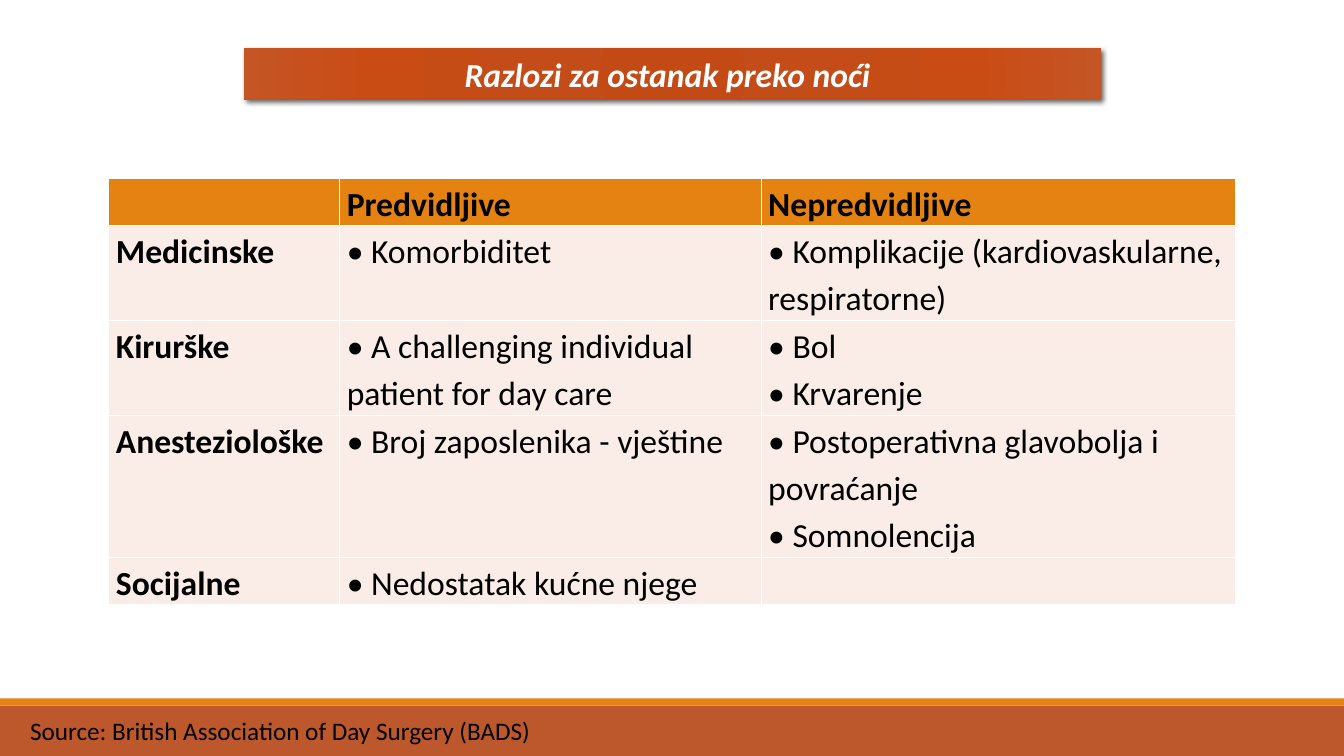
from lxml.etree import SubElement
from pptx import Presentation
from pptx.dml.color import RGBColor
from pptx.enum.shapes import MSO_SHAPE
from pptx.enum.text import MSO_ANCHOR, MSO_AUTO_SIZE, PP_ALIGN
from pptx.oxml import parse_xml
from pptx.oxml.ns import nsdecls, qn
from pptx.util import Inches, Pt

WHITE = RGBColor(0xFF, 0xFF, 0xFF)
BLACK = RGBColor(0, 0, 0)
ORANGE = RGBColor(0xE4, 0x83, 0x12)
RUST = RGBColor(0xBD, 0x58, 0x2C)
PALE = RGBColor(0xFA, 0xED, 0xE7)
TITLE_STOPS = [(0, RGBColor(0xC4, 0x4A, 0x15)), (34, RGBColor(0xC3, 0x4C, 0x18)),
               (70, RGBColor(0xC9, 0x4C, 0x15)), (100, RGBColor(0xC4, 0x55, 0x25))]

COLS = [2.29, 4.18, 4.71]
LINE_H = 0.47
# Each row: its height in text lines, then the paragraphs of its three cells
ROWS = [
    (1, [], ["Predvidljive"], ["Nepredvidljive"]),
    (2, ["Medicinske"], ["• Komorbiditet"],
     ["• Komplikacije (kardiovaskularne, respiratorne)"]),
    (2, ["Kirurške"], ["• A challenging individual patient for day care"],
     ["• Bol", "• Krvarenje"]),
    (3, ["Anesteziološke"], ["• Broj zaposlenika - vještine"],
     ["• Postoperativna glavobolja i povraćanje", "• Somnolencija"]),
    (1, ["Socijalne"], ["• Nedostatak kućne njege"], []),
]


def write(tf, lines, size=24, color=BLACK, bold=False, italic=False,
          align=PP_ALIGN.LEFT, spacing=1.0):
    for i, line in enumerate(lines):
        p = tf.paragraphs[0] if i == 0 else tf.add_paragraph()
        p.alignment, p.line_spacing = align, spacing
        r = p.add_run()
        r.text = line
        r.font.name, r.font.size = "Calibri", Pt(size)
        r.font.bold, r.font.italic = bold, italic
        r.font.color.rgb = color


prs = Presentation()
prs.slide_width, prs.slide_height = Inches(13.33), Inches(7.5)
slide = prs.slides.add_slide(prs.slide_layouts[5])

# Footer bars
for top, height, color in [(7, 0.5, RUST), (6.93, 0.07, ORANGE)]:
    sp = slide.shapes.add_shape(MSO_SHAPE.RECTANGLE, 0, Inches(top),
                                prs.slide_width, Inches(height))
    sp.shadow.inherit = False
    sp.fill.solid()
    sp.fill.fore_color.rgb = color
    sp.line.fill.background()

# Title banner with radial gradient and shadow
title = slide.shapes.title
title.left, title.top = Inches(2.42), Inches(0.48)
title.width, title.height = Inches(8.5), Inches(0.51)
stops = "".join(f'<a:gs pos="{pos * 1000}"><a:srgbClr val="{color}"/></a:gs>'
                for pos, color in TITLE_STOPS)
spPr = title.element.spPr
for xml in [
    f'<a:prstGeom {nsdecls("a")} prst="rect"><a:avLst/></a:prstGeom>',
    f'<a:gradFill {nsdecls("a")} rotWithShape="1"><a:gsLst>{stops}</a:gsLst>'
    '<a:path path="circle"><a:fillToRect l="100000" t="100000" r="100000" b="100000"/>'
    '</a:path></a:gradFill>',
    f'<a:effectLst {nsdecls("a")}><a:outerShdw blurRad="{Pt(3.5)}" dist="{Pt(2)}" '
    'dir="2700000" rotWithShape="0"><a:srgbClr val="000000"><a:alpha val="60000"/>'
    '</a:srgbClr></a:outerShdw></a:effectLst>',
]:
    spPr.append(parse_xml(xml))
tf = title.text_frame
tf.auto_size, tf.vertical_anchor = MSO_AUTO_SIZE.NONE, MSO_ANCHOR.MIDDLE
tf.margin_left, tf.margin_right = 0, Inches(0.1)
tf.margin_top = tf.margin_bottom = Inches(0.05)
write(tf, ["Razlozi za ostanak preko noći"], color=WHITE, bold=True, italic=True,
      align=PP_ALIGN.CENTER)

# Table of reasons
total_lines = sum(row[0] for row in ROWS)
table = slide.shapes.add_table(len(ROWS), len(COLS), Inches(1.08), Inches(1.77),
                               Inches(sum(COLS)), Inches(total_lines * LINE_H)).table
table.first_row = table.horz_banding = False
for col, width in zip(table.columns, COLS):
    col.width = Inches(width)
for i, (line_count, *texts) in enumerate(ROWS):
    table.rows[i].height = Inches(line_count * LINE_H)
    for j, lines in enumerate(texts):
        cell = table.cell(i, j)
        cell.margin_left = cell.margin_right = Inches(0.07)
        cell.margin_top = cell.margin_bottom = 0
        for side in ("a:lnL", "a:lnR", "a:lnT", "a:lnB"):
            ln = SubElement(cell._tc.get_or_add_tcPr(), qn(side), w=str(Pt(1)))
            fill = SubElement(ln, qn("a:solidFill"))
            SubElement(fill, qn("a:srgbClr"), val=str(WHITE))
        cell.fill.solid()
        cell.fill.fore_color.rgb = ORANGE if i == 0 else PALE
        write(cell.text_frame, lines, bold=i == 0 or j == 0, spacing=1.15)

# Source line
box = slide.shapes.add_textbox(Inches(0.2), Inches(7.05), Inches(5.22), Inches(0.4))
box.text_frame.word_wrap = False
write(box.text_frame, ["Source: British Association of Day Surgery (BADS)"], size=18)

prs.save("out.pptx")
